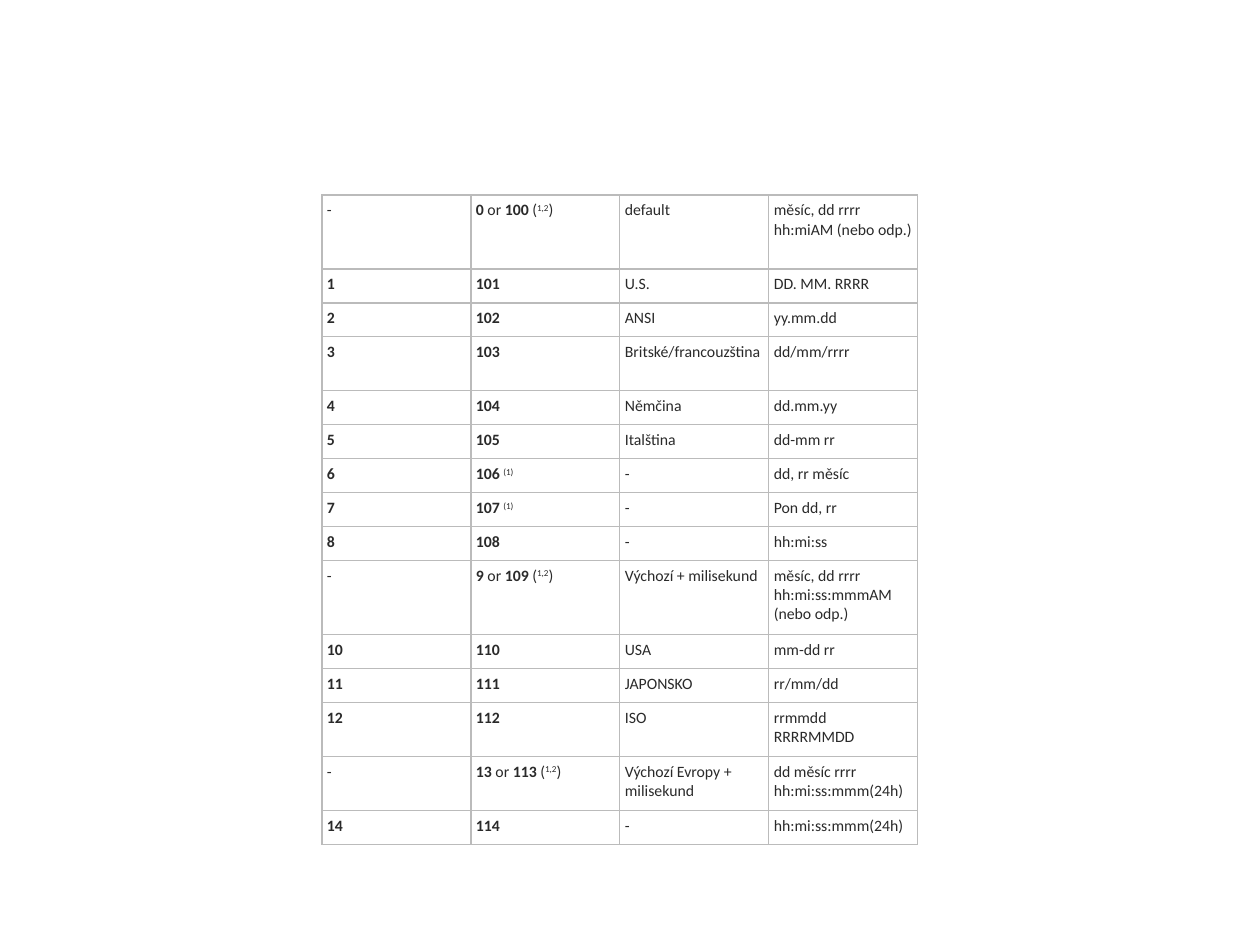
from lxml.etree import SubElement
from pptx import Presentation
from pptx.dml.color import RGBColor
from pptx.enum.text import MSO_ANCHOR, PP_ALIGN
from pptx.oxml.ns import qn
from pptx.util import Pt

PX = 914400 // 126
COLORS = {"text": "2A2A2A", "border": "BBBBBB"}
FONT, FONT_SIZE = "Calibri", 9
PLAIN, BOLD, SUPER = "plain", "bold", "super"


def either(short, long):
    """Runs for a pair of codes followed by footnote marks."""
    return [(short, BOLD), (" or ", PLAIN), (long, BOLD),
            (" (", PLAIN), ("1,2", SUPER), (")", PLAIN)]


def noted(code):
    """Runs for one code with a footnote mark."""
    return [(code + " ", BOLD), ("(1)", SUPER)]


# Content: short code, long code, standard, format (a line break starts a paragraph)
ROWS = [
    ("-", either("0", "100"), "default", "měsíc, dd rrrr hh:miAM (nebo odp.)"),
    ("1", "101", "U.S.", "DD. MM. RRRR"),
    ("2", "102", "ANSI", "yy.mm.dd"),
    ("3", "103", "Britské/francouzština", "dd/mm/rrrr"),
    ("4", "104", "Němčina", "dd.mm.yy"),
    ("5", "105", "Italština", "dd-mm rr"),
    ("6", noted("106"), "-", "dd, rr měsíc"),
    ("7", noted("107"), "-", "Pon dd, rr"),
    ("8", "108", "-", "hh:mi:ss"),
    ("-", either("9", "109"), "Výchozí + milisekund",
     "měsíc, dd rrrr hh:mi:ss:mmmAM (nebo odp.)"),
    ("10", "110", "USA", "mm-dd rr"),
    ("11", "111", "JAPONSKO", "rr/mm/dd"),
    ("12", "112", "ISO", "rrmmdd\nRRRRMMDD"),
    ("-", either("13", "113"), "Výchozí Evropy + milisekund",
     "dd měsíc rrrr hh:mi:ss:mmm(24h)"),
    ("14", "114", "-", "hh:mi:ss:mmm(24h)"),
]

# Layout in px
LEFT, TOP, COLUMN_WIDTH = 322, 195, 149
ROW_HEIGHT = 34
TALL_ROWS = {0: 74, 3: 54, 9: 74, 12: 54, 13: 54}
MARGIN_X, MARGIN_Y = 5, 6


def add_run(para, text, style):
    span = para.add_run()
    span.text = text
    font = span.font
    font.name, font.size = FONT, Pt(FONT_SIZE)
    font.bold = style == BOLD
    font.color.rgb = RGBColor.from_string(COLORS["text"])
    if style == SUPER:
        span._r.get_or_add_rPr().set("baseline", "30000")


def add_borders(cell):
    properties = cell._tc.get_or_add_tcPr()
    for side in ("lnL", "lnR", "lnT", "lnB"):
        line = SubElement(properties, qn(f"a:{side}"), w=str(Pt(0.75)))
        fill = SubElement(line, qn("a:solidFill"))
        SubElement(fill, qn("a:srgbClr"), val=COLORS["border"])


def fill_cell(cell, content, column):
    add_borders(cell)
    cell.fill.background()
    cell.margin_left = cell.margin_right = MARGIN_X * PX
    cell.margin_top = cell.margin_bottom = MARGIN_Y * PX
    cell.vertical_anchor = MSO_ANCHOR.TOP
    if isinstance(content, str):
        style = BOLD if column < 2 and content != "-" else PLAIN
        paragraphs = [[(line, style)] for line in content.split("\n")]
    else:
        paragraphs = [content]
    frame = cell.text_frame
    for index, runs in enumerate(paragraphs):
        para = frame.add_paragraph() if index else frame.paragraphs[0]
        para.alignment = PP_ALIGN.LEFT
        for text, style in runs:
            add_run(para, text, style)


def main():
    deck = Presentation()
    deck.slide_width, deck.slide_height = 1260 * PX, 945 * PX
    page = deck.slides.add_slide(deck.slide_layouts[6])

    # Table of date format codes
    heights = [TALL_ROWS.get(index, ROW_HEIGHT) for index in range(len(ROWS))]
    columns = len(ROWS[0])
    table = page.shapes.add_table(
        len(ROWS), columns, LEFT * PX, TOP * PX,
        columns * COLUMN_WIDTH * PX, sum(heights) * PX).table
    table.first_row = table.horz_banding = False
    for column in table.columns:
        column.width = COLUMN_WIDTH * PX
    for row, height, contents in zip(table.rows, heights, ROWS):
        row.height = height * PX
        for column, (cell, content) in enumerate(zip(row.cells, contents)):
            fill_cell(cell, content, column)

    deck.save("out.pptx")


if __name__ == "__main__":
    main()
